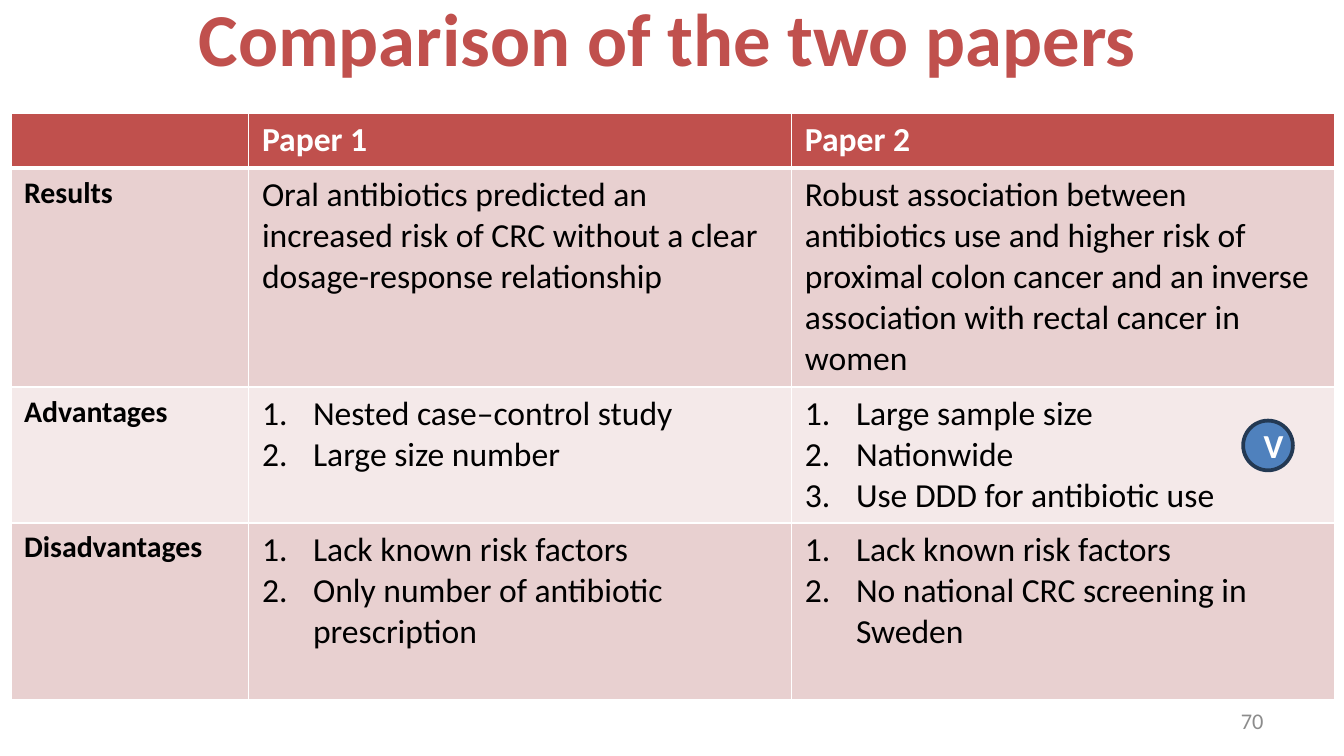
from lxml.etree import SubElement
from pptx import Presentation
from pptx.dml.color import RGBColor
from pptx.enum.shapes import MSO_SHAPE
from pptx.enum.text import MSO_ANCHOR, MSO_AUTO_SIZE, PP_ALIGN
from pptx.oxml.ns import qn
from pptx.util import Inches, Pt

# Content: a string is plain text, a list is numbered
TITLE = "Comparison of the two papers"
HEADER = ["", "Paper 1", "Paper 2"]
ROWS = [
    ["Results",
     "Oral antibiotics predicted an increased risk of CRC without a clear "
     "dosage-response relationship",
     "Robust association between antibiotics use and higher risk of proximal "
     "colon cancer and an inverse association with rectal cancer in women"],
    ["Advantages",
     ["Nested case–control study", "Large size number"],
     ["Large sample size", "Nationwide", "Use DDD for antibiotic use"]],
    ["Disadvantages",
     ["Lack known risk factors", "Only number of antibiotic prescription"],
     ["Lack known risk factors", "No national CRC screening in Sweden"]],
]
BADGE = "V"
PAGE_NUMBER = "70"

COLUMN_WIDTHS = [1.77, 4.04, 4.04]
ROW_HEIGHTS = [0.41, 1.63, 1.01, 1.32]
RED, WHITE, BLACK = "C0504D", "FFFFFF", "000000"
BANDS = ["E8D0D0", "F4E9E9"]


def color(value):
    return RGBColor.from_string(value)


def box(left, top, width, height):
    return [Inches(length) for length in (left, top, width, height)]


def add_text(paragraph, text, size, ink, bold=False):
    run = paragraph.add_run()
    run.text = text
    run.font.name = "Calibri"
    run.font.size = Pt(size)
    run.font.bold = bold
    run.font.color.rgb = color(ink)


def number(paragraph):
    properties = paragraph._p.get_or_add_pPr()
    properties.set("marL", str(Inches(0.38)))
    properties.set("indent", str(-Inches(0.38)))
    SubElement(properties, qn("a:buFont"), typeface="+mj-lt")
    SubElement(properties, qn("a:buAutoNum"), type="arabicPeriod")


def add_borders(cell, bottom):
    properties = cell._tc.get_or_add_tcPr()
    for side, width in (("L", 1), ("R", 1), ("T", 1), ("B", bottom)):
        border = SubElement(properties, qn(f"a:ln{side}"), w=str(Pt(width)))
        fill = SubElement(border, qn("a:solidFill"))
        SubElement(fill, qn("a:srgbClr"), val=WHITE)


def fill_cell(cell, content, background, size, ink, bold, bottom=1):
    add_borders(cell, bottom)
    cell.fill.solid()
    cell.fill.fore_color.rgb = color(background)
    numbered = isinstance(content, list)
    for index, text in enumerate(content if numbered else [content]):
        frame = cell.text_frame
        paragraph = frame.add_paragraph() if index else frame.paragraphs[0]
        if numbered:
            number(paragraph)
        if text:
            add_text(paragraph, text, size, ink, bold)


# Widescreen slide, 16 to 9
presentation = Presentation()
presentation.slide_width = Inches(10)
presentation.slide_height = Inches(10 * 9 / 16)
slide = presentation.slides.add_slide(presentation.slide_layouts[5])

# Comparison table
table = slide.shapes.add_table(
    len(ROW_HEIGHTS), len(COLUMN_WIDTHS),
    *box(0.08, 0.84, sum(COLUMN_WIDTHS), sum(ROW_HEIGHTS))).table
for column, width in zip(table.columns, COLUMN_WIDTHS):
    column.width = Inches(width)
for row, height in zip(table.rows, ROW_HEIGHTS):
    row.height = Inches(height)
for column, heading in enumerate(HEADER):
    fill_cell(table.cell(0, column), heading, RED, 18, WHITE, True, bottom=3)
for row, contents in enumerate(ROWS):
    for column, content in enumerate(contents):
        is_label = column == 0
        fill_cell(table.cell(row + 1, column), content, BANDS[row % 2],
                  16 if is_label else 18, BLACK, is_label)

# Title
title = slide.shapes.title
title.left, title.top, title.width, title.height = box(1.34, -0.11, 7.25, 0.77)
title.text_frame.word_wrap = False
title.text_frame.auto_size = MSO_AUTO_SIZE.SHAPE_TO_FIT_TEXT
title.text_frame.vertical_anchor = MSO_ANCHOR.TOP
add_text(title.text_frame.paragraphs[0], TITLE, 40, RED, True)

# Round badge beside the advantages of paper 2
badge = slide.shapes.add_shape(MSO_SHAPE.OVAL, *box(9.25, 3.13, 0.37, 0.37))
badge.shadow.inherit = False
badge.fill.solid()
badge.fill.fore_color.rgb = color("4F81BD")
badge.line.color.rgb = color("233953")
badge.line.width = Pt(2)
badge.text_frame.vertical_anchor = MSO_ANCHOR.MIDDLE
badge.text_frame.paragraphs[0].alignment = PP_ALIGN.CENTER
add_text(badge.text_frame.paragraphs[0], BADGE, 18, WHITE, True)

# Page number
page = slide.shapes.add_textbox(*box(7.17, 5.21, 2.33, 0.3)).text_frame
page.word_wrap = True
page.vertical_anchor = MSO_ANCHOR.MIDDLE
page.paragraphs[0].alignment = PP_ALIGN.RIGHT
add_text(page.paragraphs[0], PAGE_NUMBER, 12, "8C8C8C")

presentation.save("out.pptx")
